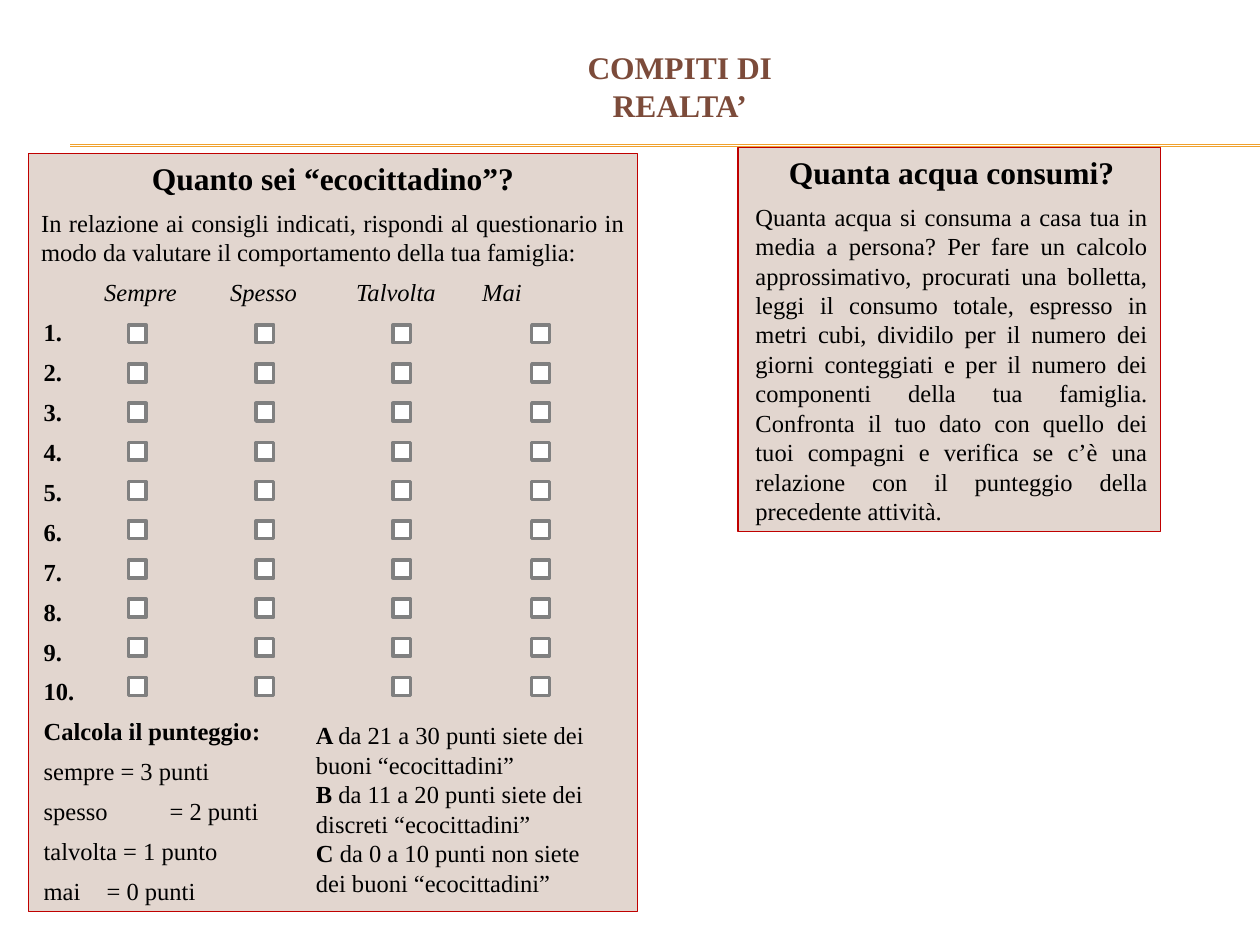
from dataclasses import dataclass
from itertools import product

from lxml.etree import SubElement
from pptx import Presentation
from pptx.dml.color import RGBColor
from pptx.enum.shapes import MSO_CONNECTOR, MSO_SHAPE
from pptx.enum.text import MSO_ANCHOR, MSO_AUTO_SIZE, PP_ALIGN
from pptx.oxml.ns import qn
from pptx.util import Cm, Pt


@dataclass(frozen=True)
class Theme:
    font: str = "Times New Roman"
    heading: int = 18
    body: int = 14
    gap: int = 6
    text: str = "000000"
    title: str = "7C4B3A"
    rule: str = "F0A22E"
    panel: str = "E2D6CF"
    border: str = "C00000"
    box: str = "FFFFFF"
    box_border: str = "808080"


THEME = Theme()
ITEM_INDENT = 0.05
HEADER_TABS = (1.24, 3.94, 6.63, 9.73)
POINTS_TAB = 1.62
BOX_LEFTS = (2.59, 5.16, 7.92, 10.72)
BOX_TOP, BOX_PITCH, BOX_SIDE = 6.55, 0.79, 0.36
QUESTIONS = 10


def color(value):
    return RGBColor.from_string(value)


def add_run(paragraph, text, size=THEME.body, bold=False, italic=False,
            ink=THEME.text):
    run = paragraph.add_run()
    run.text = text
    font = run.font
    font.name, font.size = THEME.font, Pt(size)
    font.bold, font.italic = bold, italic
    font.color.rgb = color(ink)


def add_paragraph(frame, align, indent=0, gap=THEME.gap, tabs=()):
    # The first paragraph of a frame already exists and starts empty
    first = frame.paragraphs[0]
    paragraph = frame.add_paragraph() if first.runs else first
    paragraph.alignment = align
    paragraph.space_after = Pt(gap)
    properties = paragraph._p.get_or_add_pPr()
    properties.set("marL", str(Cm(indent)))
    properties.set("indent", "0")
    if tabs:
        tab_list = SubElement(properties, qn("a:tabLst"))
        for stop in tabs:
            SubElement(tab_list, qn("a:tab"), pos=str(Cm(stop)), algn="l")
    return paragraph


def add_rectangle(slide, left, top, width, height, fill, border, weight):
    rectangle = slide.shapes.add_shape(
        MSO_SHAPE.RECTANGLE, Cm(left), Cm(top), Cm(width), Cm(height))
    rectangle.shadow.inherit = False
    rectangle.fill.solid()
    rectangle.fill.fore_color.rgb = color(fill)
    rectangle.line.color.rgb = color(border)
    rectangle.line.width = Pt(weight)
    return rectangle


def add_panel(slide, left, top, width, height, anchor, heading, intro, indent=0):
    panel = add_rectangle(slide, left, top, width, height,
                          THEME.panel, THEME.border, 0.75)
    frame = panel.text_frame
    frame.word_wrap = True
    frame.vertical_anchor = anchor
    add_run(add_paragraph(frame, PP_ALIGN.CENTER, indent), heading,
            THEME.heading, bold=True)
    add_run(add_paragraph(frame, PP_ALIGN.JUSTIFY, indent), intro)
    return frame


def add_rule(slide, top):
    rule = slide.shapes.add_connector(
        MSO_CONNECTOR.STRAIGHT, Cm(1.42), Cm(top), Cm(25.4), Cm(top))
    rule.line.color.rgb = color(THEME.rule)
    rule.line.width = Pt(0.75)
    SubElement(rule._element.spPr, qn("a:effectLst"))


def set_title(slide):
    title = slide.shapes.title
    title.left, title.top = Cm(10.16), Cm(0.79)
    title.width, title.height = Cm(7.09), Cm(1.88)
    frame = title.text_frame
    frame.auto_size = MSO_AUTO_SIZE.NONE
    frame.vertical_anchor = MSO_ANCHOR.MIDDLE
    paragraph = add_paragraph(frame, PP_ALIGN.CENTER, gap=0)
    add_run(paragraph, "COMPITI DI", THEME.heading, bold=True, ink=THEME.title)
    paragraph.add_line_break()
    add_run(paragraph, "REALTA’", THEME.heading, bold=True, ink=THEME.title)


def add_questionnaire(slide):
    frame = add_panel(
        slide, 0.58, 3.1, 12.27, 15.27, MSO_ANCHOR.MIDDLE,
        "Quanto sei “ecocittadino”?",
        "In relazione ai consigli indicati, rispondi al questionario in modo "
        "da valutare il comportamento della tua famiglia:")

    # Column headings stand on tab stops
    answers = add_paragraph(frame, PP_ALIGN.LEFT, tabs=HEADER_TABS)
    add_run(answers, "\tSempre\tSpesso\tTalvolta\tMai", italic=True)

    # Question numbers, then the scoring key
    numbers = [f"{number}." for number in range(1, QUESTIONS + 1)]
    for label in numbers + ["Calcola il punteggio:"]:
        add_run(add_paragraph(frame, PP_ALIGN.LEFT, ITEM_INDENT), label, bold=True)
    for points in ("sempre = 3 punti", "spesso\t= 2 punti",
                   "talvolta = 1 punto", "mai\t= 0 punti"):
        add_run(add_paragraph(frame, PP_ALIGN.LEFT, ITEM_INDENT,
                              tabs=(POINTS_TAB,)), points)


def add_results(slide):
    results = slide.shapes.add_textbox(Cm(6.12), Cm(14.4), Cm(6.32), Cm(3.81))
    frame = results.text_frame
    frame.word_wrap = True
    for grade, meaning in (
            ("A ", "da 21 a 30 punti siete dei buoni “ecocittadini”"),
            ("B ", "da 11 a 20 punti siete dei discreti “ecocittadini”"),
            ("C ", "da 0 a 10 punti non siete dei buoni “ecocittadini”")):
        paragraph = add_paragraph(frame, PP_ALIGN.LEFT, gap=0)
        add_run(paragraph, grade, bold=True)
        add_run(paragraph, meaning)


def add_checkboxes(slide):
    for row, left in product(range(QUESTIONS), BOX_LEFTS):
        add_rectangle(slide, left, BOX_TOP + row * BOX_PITCH, BOX_SIDE, BOX_SIDE,
                      THEME.box, THEME.box_border, 2)


def main():
    deck = Presentation()
    deck.slide_width, deck.slide_height = Cm(25.4), Cm(19.05)
    slide = deck.slides.add_slide(deck.slide_layouts[5])

    # Header
    set_title(slide)
    for top in (2.92, 2.95):
        add_rule(slide, top)

    # Water consumption task
    add_panel(
        slide, 14.88, 2.97, 8.51, 7.75, MSO_ANCHOR.TOP,
        "Quanta acqua consumi?",
        "Quanta acqua si consuma a casa tua in media a persona? Per fare un "
        "calcolo approssimativo, procurati una bolletta, leggi il consumo "
        "totale, espresso in metri cubi, dividilo per il numero dei giorni "
        "conteggiati e per il numero dei componenti della tua famiglia. "
        "Confronta il tuo dato con quello dei tuoi compagni e verifica se c’è "
        "una relazione con il punteggio della precedente attività.",
        indent=0.1)

    # Questionnaire with its answer grid and results
    add_questionnaire(slide)
    add_results(slide)
    add_checkboxes(slide)

    deck.save("out.pptx")


if __name__ == "__main__":
    main()
